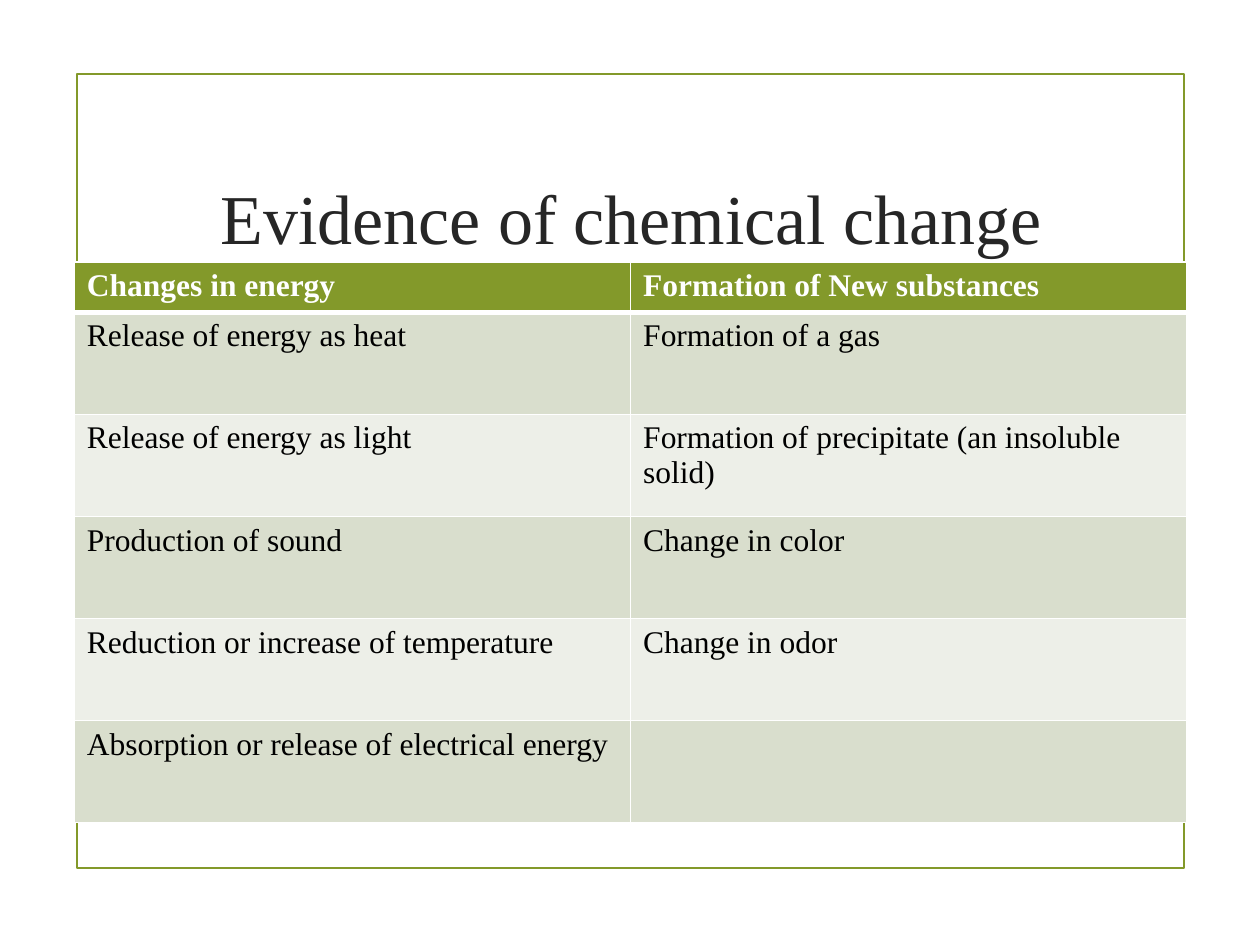
"""Builds a slide with a table of the evidence of chemical change."""
from lxml.etree import SubElement
from pptx import Presentation
from pptx.dml.color import RGBColor
from pptx.enum.shapes import MSO_SHAPE as Shape
from pptx.enum.text import MSO_ANCHOR as Anchor, PP_ALIGN as Align
from pptx.oxml.ns import qn
from pptx.util import Inches, Pt

FONT = "Times New Roman"
GREEN = RGBColor(0x83, 0x99, 0x2A)
DARK_BAND = RGBColor(0xD9, 0xDE, 0xCD)
LIGHT_BAND = RGBColor(0xED, 0xEF, 0xE8)
WHITE = RGBColor(0xFF, 0xFF, 0xFF)
BLACK = RGBColor(0, 0, 0)
CHARCOAL = RGBColor(0x26, 0x26, 0x26)

EVIDENCE = [
    ("Changes in energy", "Formation of New substances"),
    ("Release of energy as heat", "Formation of a gas"),
    ("Release of energy as light", "Formation of precipitate (an insoluble solid)"),
    ("Production of sound", "Change in color"),
    ("Reduction or increase of temperature", "Change in odor"),
    ("Absorption or release of electrical energy", ""),
]


def add_span(para, text, size, color, bold=False):
    """Add one styled run to a paragraph."""
    span = para.add_run()
    span.text = text
    span.font.name = FONT
    span.font.size = Pt(size)
    span.font.bold = bold
    span.font.color.rgb = color


def add_frame(page):
    """Draw the thin green border of the page."""
    frame = page.shapes.add_shape(
        Shape.RECTANGLE, Inches(0.61), Inches(0.59), Inches(8.79), Inches(6.3))
    frame.shadow.inherit = False
    frame.fill.background()
    frame.line.color.rgb = GREEN
    frame.line.width = Pt(1.25)


def add_title(page, text):
    """Add the centred title."""
    box = page.shapes.add_textbox(
        Inches(1.29), Inches(1), Inches(7.44), Inches(1.43))
    box.text_frame.word_wrap = True
    box.text_frame.vertical_anchor = Anchor.MIDDLE
    para = box.text_frame.paragraphs[0]
    para.alignment = Align.CENTER
    add_span(para, text, 40, CHARCOAL)


def set_borders(cell, widths):
    """Give a cell white borders, with widths in points by side."""
    properties = cell._tc.get_or_add_tcPr()
    for side, width in widths.items():
        line = SubElement(properties, qn(f"a:ln{side}"), w=str(Pt(width)))
        fill = SubElement(line, qn("a:solidFill"))
        SubElement(fill, qn("a:srgbClr"), val=str(WHITE))


def style_cell(cell, text, row):
    """Fill a cell by its row and write its text."""
    header = row == 0
    set_borders(cell, {"L": 1, "R": 1, "T": 3 if row == 1 else 1,
                       "B": 3 if header else 1})
    cell.fill.solid()
    band = DARK_BAND if row % 2 else LIGHT_BAND
    cell.fill.fore_color.rgb = GREEN if header else band
    if text:
        add_span(cell.text_frame.paragraphs[0], text, 18,
                 WHITE if header else BLACK, header)


def add_evidence_table(page, rows):
    """Add the two-column table with a header row."""
    table = page.shapes.add_table(
        len(rows), 2, Inches(0.59), Inches(2.08), Inches(8.83), Inches(4.42)).table
    for index, texts in enumerate(rows):
        table.rows[index].height = Inches(0.81 if index else 0.37)
        for column, text in enumerate(texts):
            style_cell(table.cell(index, column), text, index)


def main():
    """Build and save the deck."""
    deck = Presentation()
    deck.slide_width, deck.slide_height = Inches(10), Inches(7.5)
    page = deck.slides.add_slide(deck.slide_layouts[6])
    add_frame(page)
    add_title(page, "Evidence of chemical change")
    add_evidence_table(page, EVIDENCE)
    deck.save("out.pptx")


if __name__ == "__main__":
    main()
